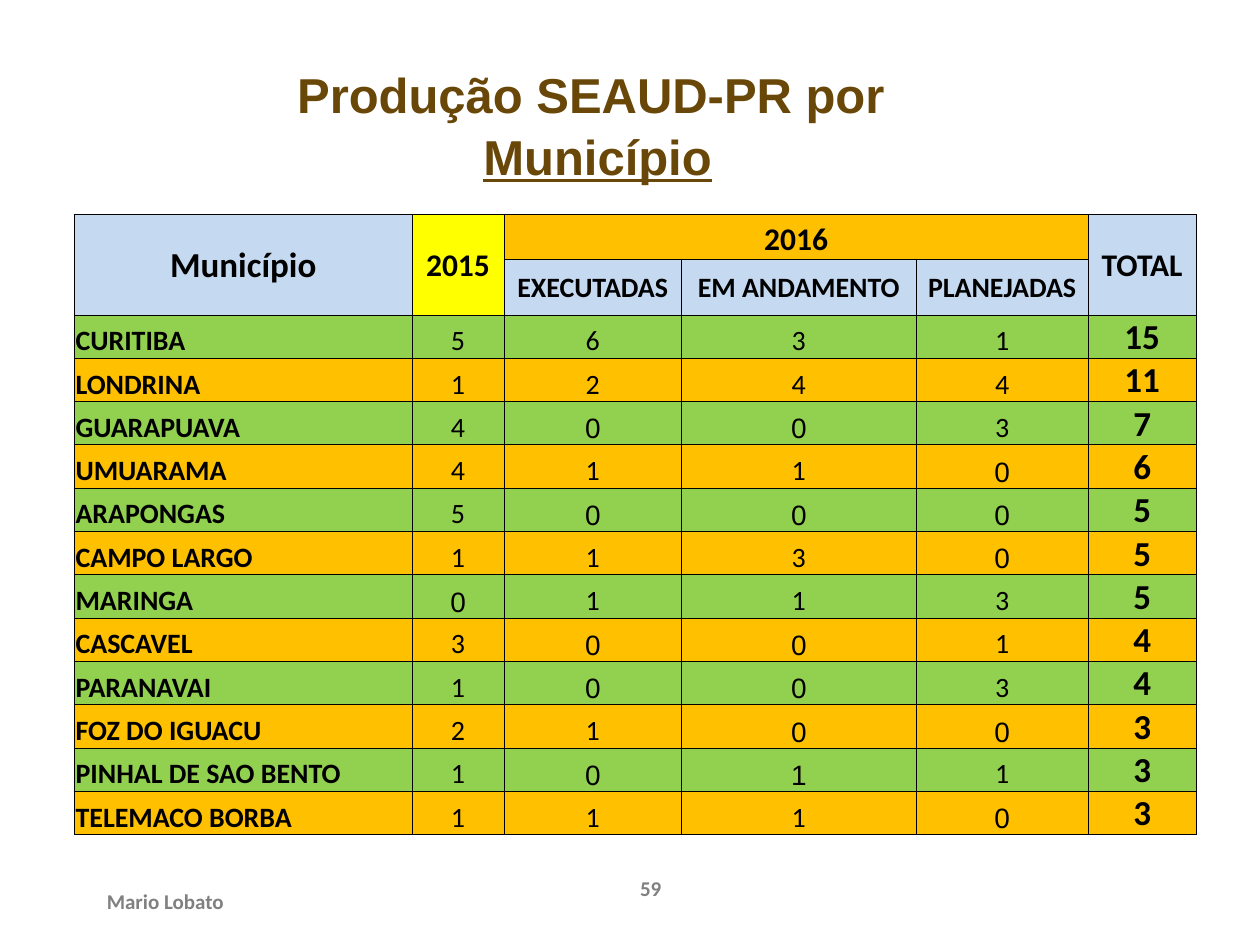
from typing import NamedTuple

from lxml.etree import SubElement
from pptx import Presentation
from pptx.dml.color import RGBColor
from pptx.enum.text import MSO_ANCHOR, PP_ALIGN
from pptx.oxml.ns import qn
from pptx.util import Pt

COLORS = {
    "title": "694708",
    "footer": "808080",
    "text": "000000",
    "border": "000000",
    "blue": "C5D9F1",
    "yellow": "FFFF00",
    "orange": "FFC000",
    "green": "92D050",
}
COLUMN_WIDTHS = [193, 52.5, 101.5, 134, 98.5, 61.5]
HEADER_HEIGHTS = [25.5, 32]
ROW_HEIGHT = 24.75


class HeaderCell(NamedTuple):
    text: str
    row: int
    column: int
    last_row: int
    last_column: int
    size: float
    fill: str
    anchor: MSO_ANCHOR = MSO_ANCHOR.MIDDLE


class Municipality(NamedTuple):
    name: str
    values: tuple[int, int, int, int]
    total: int


class FooterText(NamedTuple):
    text: str
    left: float
    width: float
    alignment: PP_ALIGN
    margin_top: float
    margin_bottom: float


HEADERS = [
    HeaderCell("Município", 0, 0, 1, 0, 20, "blue"),
    HeaderCell("2015", 0, 1, 1, 1, 18, "yellow"),
    HeaderCell("2016", 0, 2, 0, 4, 18, "orange", MSO_ANCHOR.BOTTOM),
    HeaderCell("TOTAL", 0, 5, 1, 5, 18, "blue"),
    HeaderCell("EXECUTADAS", 1, 2, 1, 2, 16, "blue"),
    HeaderCell("EM ANDAMENTO", 1, 3, 1, 3, 16, "blue"),
    HeaderCell("PLANEJADAS", 1, 4, 1, 4, 16, "blue"),
]
MUNICIPALITIES = [
    Municipality("CURITIBA", (5, 6, 3, 1), 15),
    Municipality("LONDRINA", (1, 2, 4, 4), 11),
    Municipality("GUARAPUAVA", (4, 0, 0, 3), 7),
    Municipality("UMUARAMA", (4, 1, 1, 0), 6),
    Municipality("ARAPONGAS", (5, 0, 0, 0), 5),
    Municipality("CAMPO LARGO", (1, 1, 3, 0), 5),
    Municipality("MARINGA", (0, 1, 1, 3), 5),
    Municipality("CASCAVEL", (3, 0, 0, 1), 4),
    Municipality("PARANAVAI", (1, 0, 0, 3), 4),
    Municipality("FOZ DO IGUACU", (2, 1, 0, 0), 3),
    Municipality("PINHAL DE SAO BENTO", (1, 0, 1, 1), 3),
    Municipality("TELEMACO BORBA", (1, 1, 1, 0), 3),
]
# Zeros are set in Arial, and so is this one other value.
ARIAL_VALUE = ("PINHAL DE SAO BENTO", 3)
FOOTERS = [
    FooterText("Mario Lobato", 54, 216, PP_ALIGN.LEFT, 3.6, 3.6),
    FooterText("59", 347.75, 48.25, PP_ALIGN.CENTER, 0, 14.4),
]


def format_paragraph(paragraph, size: float, color: str, font_name: str = "Calibri",
                     bold: bool = True, alignment: PP_ALIGN = PP_ALIGN.CENTER) -> None:
    paragraph.alignment = alignment
    for run in paragraph.runs:
        run.font.name = font_name
        run.font.size = Pt(size)
        run.font.bold = bold
        run.font.color.rgb = RGBColor.from_string(COLORS[color])


def style_cell(cell, fill: str, anchor: MSO_ANCHOR) -> None:
    """Set the borders, fill, margins and anchor of a table cell."""
    properties = cell._tc.get_or_add_tcPr()
    for side in ("a:lnL", "a:lnR", "a:lnT", "a:lnB"):
        line = SubElement(properties, qn(side), w=str(Pt(0.5)))
        solid_fill = SubElement(line, qn("a:solidFill"))
        SubElement(solid_fill, qn("a:srgbClr"), val=COLORS["border"])
    cell.fill.solid()
    cell.fill.fore_color.rgb = RGBColor.from_string(COLORS[fill])
    cell.margin_left = cell.margin_right = cell.margin_top = Pt(0.72)
    cell.margin_bottom = 0
    cell.vertical_anchor = anchor


def write_cell(cell, text: str, size: float, **formatting) -> None:
    cell.text_frame.text = text
    format_paragraph(cell.text_frame.paragraphs[0], size, "text", **formatting)


def add_header(table, header: HeaderCell) -> None:
    for row in range(header.row, header.last_row + 1):
        for column in range(header.column, header.last_column + 1):
            style_cell(table.cell(row, column), header.fill, header.anchor)
    cell = table.cell(header.row, header.column)
    last_cell = table.cell(header.last_row, header.last_column)
    if cell != last_cell and (header.row, header.column) != (header.last_row, header.last_column):
        cell.merge(last_cell)
    write_cell(cell, header.text, header.size)


def add_municipality(table, row: int, municipality: Municipality, fill: str) -> None:
    cells = table.rows[row].cells
    for cell in cells:
        style_cell(cell, fill, MSO_ANCHOR.BOTTOM)
    write_cell(cells[0], municipality.name, 16, alignment=PP_ALIGN.LEFT)
    for column, value in enumerate(municipality.values, start=1):
        in_arial = value == 0 or (municipality.name, column) == ARIAL_VALUE
        write_cell(cells[column], str(value), 16, bold=False,
                   font_name="Arial" if in_arial else "Calibri")
    write_cell(cells[5], str(municipality.total), 20)


def add_production_table(slide) -> None:
    row_heights = HEADER_HEIGHTS + [ROW_HEIGHT] * len(MUNICIPALITIES)
    table = slide.shapes.add_table(
        len(row_heights), len(COLUMN_WIDTHS), Pt(42.5), Pt(122.5),
        Pt(sum(COLUMN_WIDTHS)), Pt(sum(row_heights))).table
    for column, width in zip(table.columns, COLUMN_WIDTHS):
        column.width = Pt(width)
    for row, height in zip(table.rows, row_heights):
        row.height = Pt(height)
    for header in HEADERS:
        add_header(table, header)
    for index, municipality in enumerate(MUNICIPALITIES):
        fill = ("green", "orange")[index % 2]
        add_municipality(table, len(HEADER_HEIGHTS) + index, municipality, fill)


def add_title(slide) -> None:
    title = slide.shapes.title
    title.left, title.top, title.width, title.height = Pt(161.5), Pt(31.5), Pt(360), Pt(75)
    title.text_frame.text = "Produção SEAUD-PR por \nMunicípio"
    title.text_frame.vertical_anchor = MSO_ANCHOR.TOP
    for paragraph in title.text_frame.paragraphs:
        format_paragraph(paragraph, 28, "title", font_name="Arial")
        paragraph.line_spacing = 1.05
    title.text_frame.paragraphs[1].runs[0].font.underline = True


def add_footer(slide, footer: FooterText) -> None:
    text_box = slide.shapes.add_textbox(Pt(footer.left), Pt(500.5), Pt(footer.width), Pt(28.8))
    text_frame = text_box.text_frame
    text_frame.word_wrap = True
    text_frame.vertical_anchor = MSO_ANCHOR.MIDDLE
    text_frame.margin_top = Pt(footer.margin_top)
    text_frame.margin_bottom = Pt(footer.margin_bottom)
    text_frame.text = footer.text
    format_paragraph(text_frame.paragraphs[0], 12, "footer", alignment=footer.alignment)


def main() -> None:
    presentation = Presentation()
    presentation.slide_width, presentation.slide_height = Pt(720), Pt(540)
    slide = presentation.slides.add_slide(presentation.slide_layouts[5])
    for footer in FOOTERS:
        add_footer(slide, footer)
    add_production_table(slide)
    add_title(slide)
    presentation.save("out.pptx")


if __name__ == "__main__":
    main()
